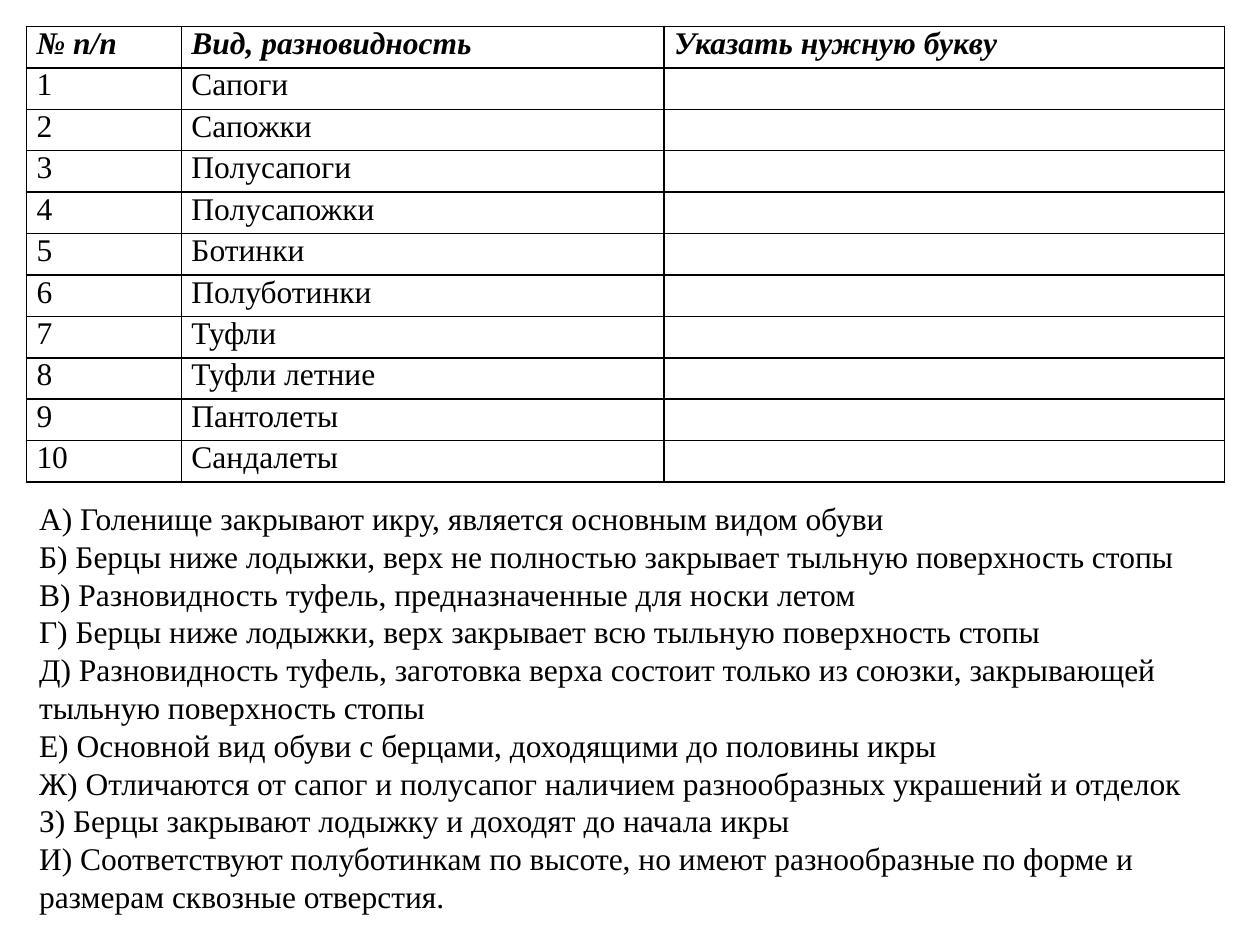
from pptx import Presentation
from pptx.dml.color import RGBColor
from pptx.enum.text import MSO_AUTO_SIZE as AutoSize, MSO_ANCHOR as Anchor
from pptx.oxml.ns import qn
from pptx.util import Inches, Pt
from lxml.etree import SubElement

BLACK = RGBColor(0x00, 0x00, 0x00)
FONT = "Times New Roman"
LEFT = Inches(0.21)
TABLE_HEIGHT = Inches(3.62)
COLUMN_WIDTHS = [1.23, 3.83, 4.45]

HEADINGS = ["№ п/п", "Вид, разновидность", "Указать нужную букву"]
SHOES = ["Сапоги", "Сапожки", "Полусапоги", "Полусапожки", "Ботинки",
         "Полуботинки", "Туфли", "Туфли летние", "Пантолеты", "Сандалеты"]
DESCRIPTIONS = [
    "А) Голенище закрывают икру, является основным видом обуви",
    "Б) Берцы ниже лодыжки, верх не полностью закрывает тыльную поверхность стопы",
    "В) Разновидность туфель, предназначенные для носки летом",
    "Г) Берцы ниже лодыжки, верх закрывает всю тыльную поверхность стопы",
    "Д) Разновидность туфель, заготовка верха состоит только из союзки, закрывающей тыльную поверхность стопы",
    "Е) Основной вид обуви с берцами, доходящими до половины икры",
    "Ж) Отличаются от сапог и полусапог наличием разнообразных украшений и отделок",
    "З) Берцы закрывают лодыжку и доходят до начала икры",
    "И) Соответствуют полуботинкам по высоте, но имеют разнообразные по форме и размерам сквозные отверстия.",
]


def add_span(para, text, emphasis=False):
    span = para.add_run()
    span.text = text
    span.font.name = FONT
    span.font.size = Pt(18)
    span.font.color.rgb = BLACK
    span.font.bold = span.font.italic = emphasis


def add_borders(cell):
    properties = cell._tc.get_or_add_tcPr()
    for position, side in enumerate(("a:lnL", "a:lnR", "a:lnT", "a:lnB")):
        line = SubElement(properties, qn(side), w=str(Pt(1)))
        properties.insert(position, line)
        fill = SubElement(line, qn("a:solidFill"))
        SubElement(fill, qn("a:srgbClr"), val=str(BLACK))


deck = Presentation()
deck.slide_width = Inches(10)
deck.slide_height = Inches(7.5)
page = deck.slides.add_slide(deck.slide_layouts[1])
title = page.shapes.title
title.element.getparent().remove(title.element)

box = page.placeholders[1]
box.left, box.top = LEFT, Inches(3.91)
box.width, box.height = Inches(9.8), Inches(3.43)
frame = box.text_frame
frame.word_wrap = True
frame.auto_size = AutoSize.SHAPE_TO_FIT_TEXT
frame.vertical_anchor = Anchor.TOP
for index, description in enumerate(DESCRIPTIONS):
    para = frame.add_paragraph() if index else frame.paragraphs[0]
    settings = para._p.get_or_add_pPr()
    settings.set("marL", "0")
    settings.set("indent", "0")
    SubElement(settings, qn("a:buNone"))
    para.space_before = Pt(0)
    add_span(para, description)

rows = [HEADINGS] + [[str(number), shoe, ""] for number, shoe in enumerate(SHOES, 1)]
table = page.shapes.add_table(len(rows), len(HEADINGS), LEFT, LEFT,
                              Inches(sum(COLUMN_WIDTHS)), TABLE_HEIGHT).table
table.first_row = table.horz_banding = False
for column, width in zip(table.columns, COLUMN_WIDTHS):
    column.width = Inches(width)
for row_index, texts in enumerate(rows):
    table.rows[row_index].height = TABLE_HEIGHT // len(rows)
    for column_index, text in enumerate(texts):
        cell = table.cell(row_index, column_index)
        cell.margin_left = cell.margin_right = Inches(0.08)
        cell.margin_top = cell.margin_bottom = 0
        cell.fill.background()
        add_borders(cell)
        if text:
            add_span(cell.text_frame.paragraphs[0], text, emphasis=row_index == 0)

deck.save("out.pptx")
